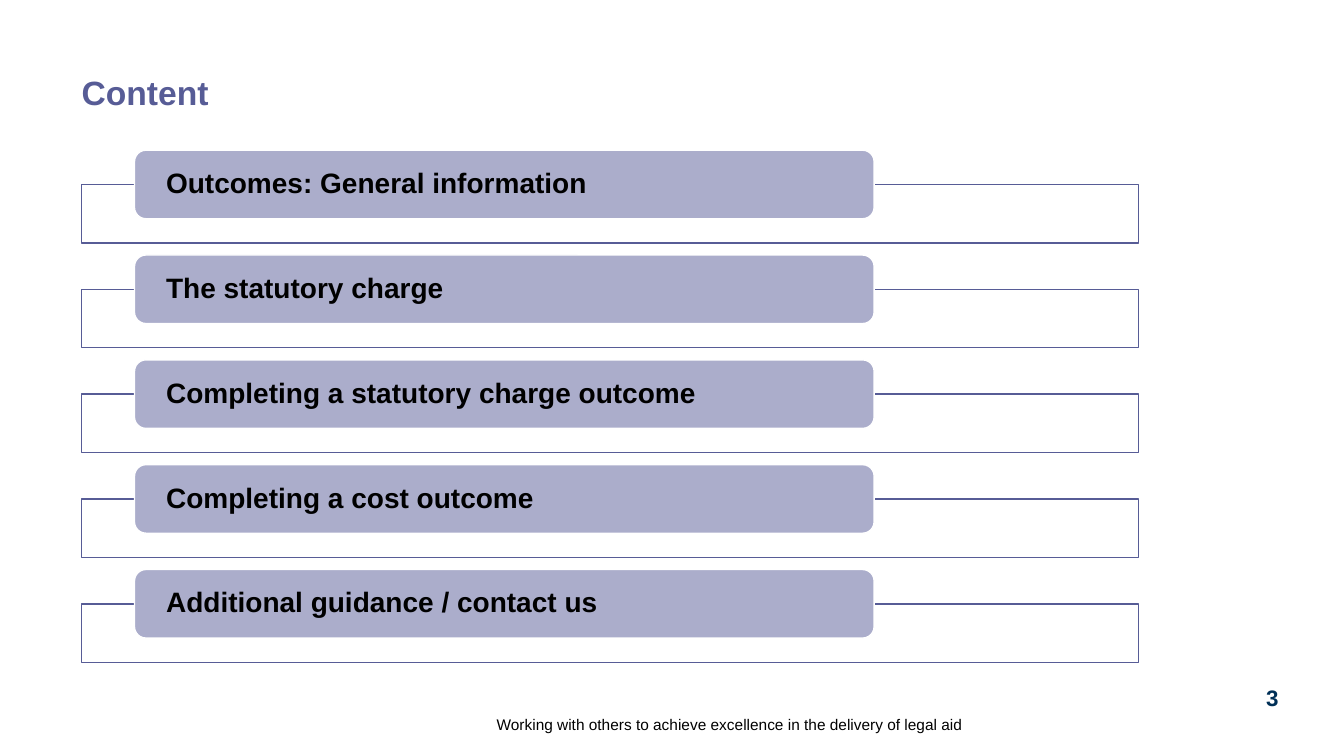
"""Build the content slide with its five agenda entries."""
from lxml import etree
from pptx import Presentation
from pptx.dml.color import RGBColor
from pptx.enum.shapes import MSO_SHAPE
from pptx.enum.text import MSO_ANCHOR, PP_ALIGN
from pptx.oxml.ns import qn
from pptx.util import Inches, Pt

RECTANGLE, ROUNDED = MSO_SHAPE.RECTANGLE, MSO_SHAPE.ROUNDED_RECTANGLE
TOP, MIDDLE, BOTTOM = MSO_ANCHOR.TOP, MSO_ANCHOR.MIDDLE, MSO_ANCHOR.BOTTOM
LEFT, CENTER, RIGHT = PP_ALIGN.LEFT, PP_ALIGN.CENTER, PP_ALIGN.RIGHT

WHITE = RGBColor(0xFF, 0xFF, 0xFF)
BLACK = RGBColor(0x00, 0x00, 0x00)
PURPLE = RGBColor(0x57, 0x5C, 0x96)
LAVENDER = RGBColor(0xAB, 0xAD, 0xCB)
NAVY = RGBColor(0x00, 0x30, 0x57)

FONT = "Arial"
TOPICS = [
    "Outcomes: General information",
    "The statutory charge",
    "Completing a statutory charge outcome",
    "Completing a cost outcome",
    "Additional guidance / contact us",
]


def write_text(shape, text, size, color, bold=True, align=LEFT, anchor=TOP,
               inset=0, line_spacing=1.0):
    """Put one formatted paragraph into a shape."""
    text_frame = shape.text_frame
    text_frame.word_wrap = True
    text_frame.vertical_anchor = anchor
    text_frame.margin_left = text_frame.margin_right = Inches(inset)
    text_frame.margin_top = text_frame.margin_bottom = 0
    text_frame.text = text
    paragraph = text_frame.paragraphs[0]
    paragraph.alignment = align
    paragraph.line_spacing = line_spacing
    font = paragraph.runs[0].font
    font.name, font.size, font.bold = FONT, Pt(size), bold
    font.color.rgb = color


def add_label(slide, box, text, size, color, **options):
    """Add a text box at the given box."""
    label = slide.shapes.add_textbox(*map(Inches, box))
    write_text(label, text, size, color, **options)


def add_panel(slide, kind, box, fill, line):
    """Add a filled, outlined shape without shadow."""
    panel = slide.shapes.add_shape(kind, *map(Inches, box))
    panel.shadow.inherit = False
    panel.fill.solid()
    panel.fill.fore_color.rgb = fill
    panel.line.color.rgb = line
    panel.line.width = Pt(1)
    return panel


def add_topic(slide, box, topic):
    """Add an outlined frame with a topic tab over its top edge."""
    left, top, width, height = box
    tab_height = 0.68
    frame_top = top + tab_height / 2
    frame = add_panel(slide, RECTANGLE,
                      (left, frame_top, width, top + height - frame_top), WHITE, PURPLE)
    fill_color = frame.fill._xPr.find(qn("a:solidFill"))[0]
    etree.SubElement(fill_color, qn("a:alpha"), val="90000")
    tab = add_panel(slide, ROUNDED, (left + width * 0.05, top, width * 0.7, tab_height),
                    LAVENDER, WHITE)
    write_text(tab, topic, 20, BLACK, anchor=MIDDLE, inset=0.28, line_spacing=0.9)


def add_topic_list(slide, box, topics):
    """Stack the topics at an equal pitch inside the box."""
    left, top, width, height = box
    topic_height = 0.92
    pitch = (height - topic_height) / (len(topics) - 1)
    for index, topic in enumerate(topics):
        add_topic(slide, (left, top + index * pitch, width, topic_height), topic)


def add_footer(slide, box):
    """Add the motto and the slide number."""
    left, top, width, height = box
    add_label(slide, (left, top + 0.13, 7.45, height - 0.13),
              "Working with others to achieve excellence in the delivery of legal aid",
              11, BLACK, bold=False, align=RIGHT, anchor=BOTTOM)
    add_label(slide, (left + width - 0.3, top, 0.3, 0.28), "3", 16, NAVY, align=CENTER)


def main():
    """Create the presentation and save it."""
    presentation = Presentation()
    presentation.slide_width = Inches(13.33)
    presentation.slide_height = Inches(7.5)
    slide = presentation.slides.add_slide(presentation.slide_layouts[6])
    add_label(slide, (0.81, 0.76, 8.44, 0.38), "Content", 24, PURPLE, line_spacing=0.9)
    add_topic_list(slide, (0.81, 1.49, 10.48, 5.08), TOPICS)
    add_footer(slide, (2.1, 6.79, 10.67, 0.49))
    presentation.save("out.pptx")


if __name__ == "__main__":
    main()
